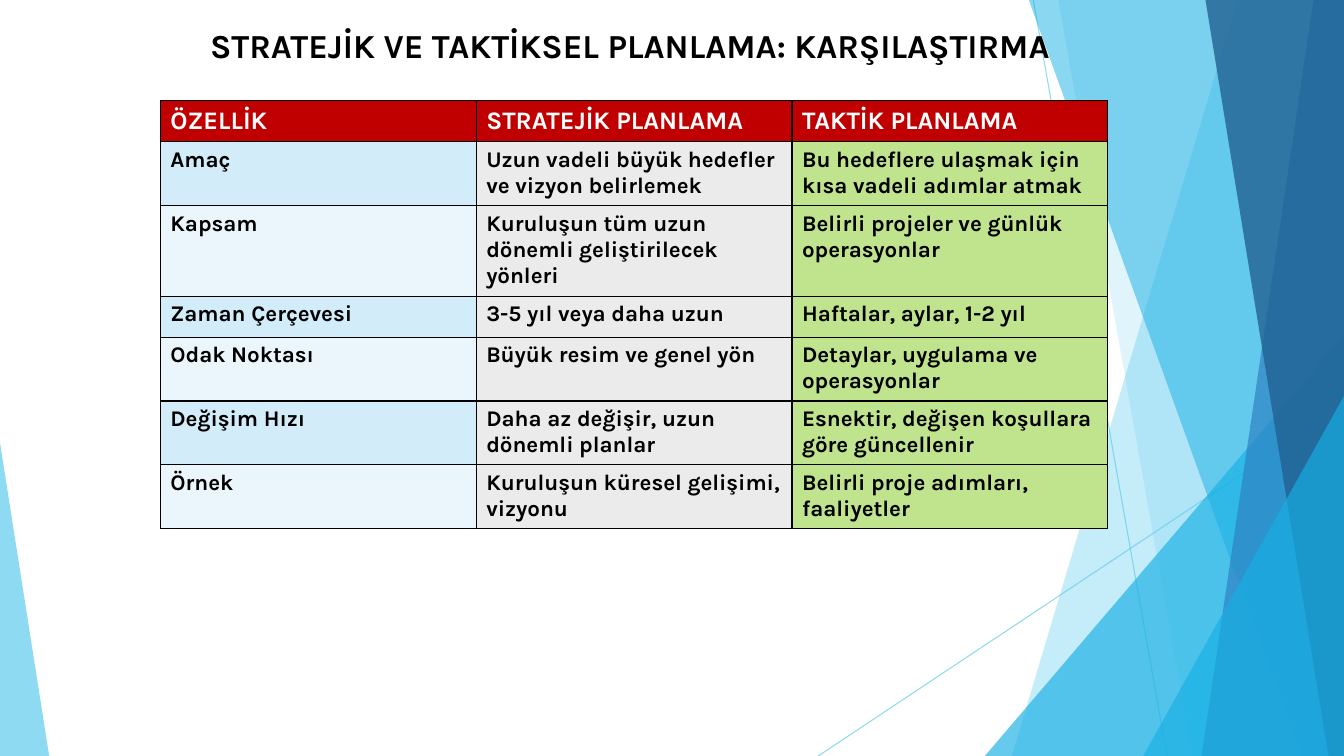
"""Build a slide that compares strategic and tactical planning in a table."""
import lxml.etree
import pptx
import pptx.dml.color
import pptx.enum.shapes
import pptx.enum.text
import pptx.oxml
import pptx.oxml.ns
import pptx.util

Cm = pptx.util.Cm
Pt = pptx.util.Pt
RGBColor = pptx.dml.color.RGBColor
qn = pptx.oxml.ns.qn
SHAPES = pptx.enum.shapes.MSO_SHAPE
ALIGN = pptx.enum.text.PP_ALIGN

BLACK = RGBColor(0x00, 0x00, 0x00)
WHITE = RGBColor(0xFF, 0xFF, 0xFF)
RED = RGBColor(0xC0, 0x00, 0x00)
SKY = RGBColor(0x5F, 0xCB, 0xEF)
CYAN = RGBColor(0x17, 0xB0, 0xE4)
BLUE = RGBColor(0x2E, 0x83, 0xC3)
NAVY = RGBColor(0x22, 0x62, 0x92)
PALE_BLUE = RGBColor(0xD2, 0xEC, 0xF9)
PALER_BLUE = RGBColor(0xEA, 0xF6, 0xFC)
GREY = RGBColor(0xEB, 0xEB, 0xEB)
GREEN = RGBColor(0xC0, 0xE3, 0x8D)

WIDTH, HEIGHT = 33.87, 19.05


def write(frame, text, size, color, align=ALIGN.LEFT):
    """Put one bold paragraph into a text frame."""
    para = frame.paragraphs[0]
    para.alignment = align
    span = para.add_run()
    span.text = text
    span.font.name = "Karla"
    span.font.size = Pt(size)
    span.font.bold = True
    span.font.color.rgb = color


def paint(fill, color, opacity):
    """Fill with a colour at an opacity in percent."""
    fill.solid()
    fill.fore_color.rgb = color
    tint = fill._xPr.find(qn("a:solidFill"))[0]
    lxml.etree.SubElement(tint, qn("a:alpha"), val=str(opacity * 1000))


deck = pptx.Presentation()
deck.slide_width, deck.slide_height = Cm(WIDTH), Cm(HEIGHT)
page = deck.slides.add_slide(deck.slide_layouts[6])

for ends in [(26.04, 0, 29.41, HEIGHT), (WIDTH, 10.24, 20.62, HEIGHT)]:
    line = page.shapes.add_connector(
        pptx.enum.shapes.MSO_CONNECTOR.STRAIGHT, *[Cm(value) for value in ends])
    line.line.width = Pt(0.75)
    paint(line.line.fill, SKY, 70)
    lxml.etree.SubElement(line._element.spPr, qn("a:effectLst"))

# Bands give top and bottom x of the left edge; triangles give apex and box.
decorations = [
    ("band", (31.19, 25.5), SKY, 36),
    ("band", (26.67, 30.05), SKY, 20),
    ("triangle", (1, 24.82, 8.46, 9.04, 10.59), CYAN, 66),
    ("band", (25.93, 32.79), CYAN, 50),
    ("band", (33.1, 30.28), BLUE, 70),
    ("band", (30.38, 33.48), NAVY, 80),
    ("triangle", (1, 28.81, 9.98, 5.06, 9.07), CYAN, 66),
    ("triangle", (0, 0, 11.15, 1.24, 7.9), SKY, 70),
]
for kind, geometry, color, opacity in decorations:
    if kind == "band":
        top, bottom = geometry
        outline = page.shapes.build_freeform(Cm(top), Cm(0))
        outline.add_line_segments(
            [(Cm(WIDTH), Cm(0)), (Cm(WIDTH), Cm(HEIGHT)), (Cm(bottom), Cm(HEIGHT))])
        shape = outline.convert_to_shape()
    else:
        apex, *box = geometry
        shape = page.shapes.add_shape(
            SHAPES.ISOSCELES_TRIANGLE, *[Cm(value) for value in box])
        shape.adjustments[0] = apex
    shape.shadow.inherit = False
    shape.line.fill.background()
    paint(shape.fill, color, opacity)

title = page.shapes.add_textbox(Cm(4.04), Cm(0.51), Cm(23.67), Cm(1.52))
title.text_frame.word_wrap = True
write(title.text_frame, "STRATEJİK VE TAKTİKSEL PLANLAMA: KARŞILAŞTIRMA",
      size=24, color=BLACK, align=ALIGN.CENTER)

rows = [
    ("ÖZELLİK", "STRATEJİK PLANLAMA", "TAKTİK PLANLAMA"),
    ("Amaç", "Uzun vadeli büyük hedefler ve vizyon belirlemek",
     "Bu hedeflere ulaşmak için kısa vadeli adımlar atmak"),
    ("Kapsam", "Kuruluşun tüm uzun dönemli geliştirilecek yönleri",
     "Belirli projeler ve günlük operasyonlar"),
    ("Zaman Çerçevesi", "3-5 yıl veya daha uzun", "Haftalar, aylar, 1-2 yıl"),
    ("Odak Noktası", "Büyük resim ve genel yön", "Detaylar, uygulama ve operasyonlar"),
    ("Değişim Hızı", "Daha az değişir, uzun dönemli planlar",
     "Esnektir, değişen koşullara göre güncellenir"),
    ("Örnek", "Kuruluşun küresel gelişimi, vizyonu",
     "Belirli proje adımları, faaliyetler"),
]
column_width, row_height = 7.96, 1.03
table = page.shapes.add_table(
    len(rows), 3, Cm(4.04), Cm(2.54),
    Cm(3 * column_width), Cm(len(rows) * row_height)).table
for column in table.columns:
    column.width = Cm(column_width)

for row_index, texts in enumerate(rows):
    table.rows[row_index].height = Cm(row_height)
    header = row_index == 0
    label_fill = PALE_BLUE if row_index % 2 else PALER_BLUE
    fills = [RED] * 3 if header else [label_fill, GREY, GREEN]
    for column_index, text in enumerate(texts):
        cell = table.cell(row_index, column_index)
        properties = cell._tc.get_or_add_tcPr()
        for side in ("lnL", "lnR", "lnT", "lnB"):
            border = lxml.etree.SubElement(properties, qn(f"a:{side}"), w=str(Pt(1)))
            solid = lxml.etree.SubElement(border, qn("a:solidFill"))
            lxml.etree.SubElement(solid, qn("a:srgbClr"), val=str(BLACK))
        cell.fill.solid()
        cell.fill.fore_color.rgb = fills[column_index]
        write(cell.text_frame, text, size=18 if header else 16,
              color=WHITE if header else BLACK)

deck.save("out.pptx")
